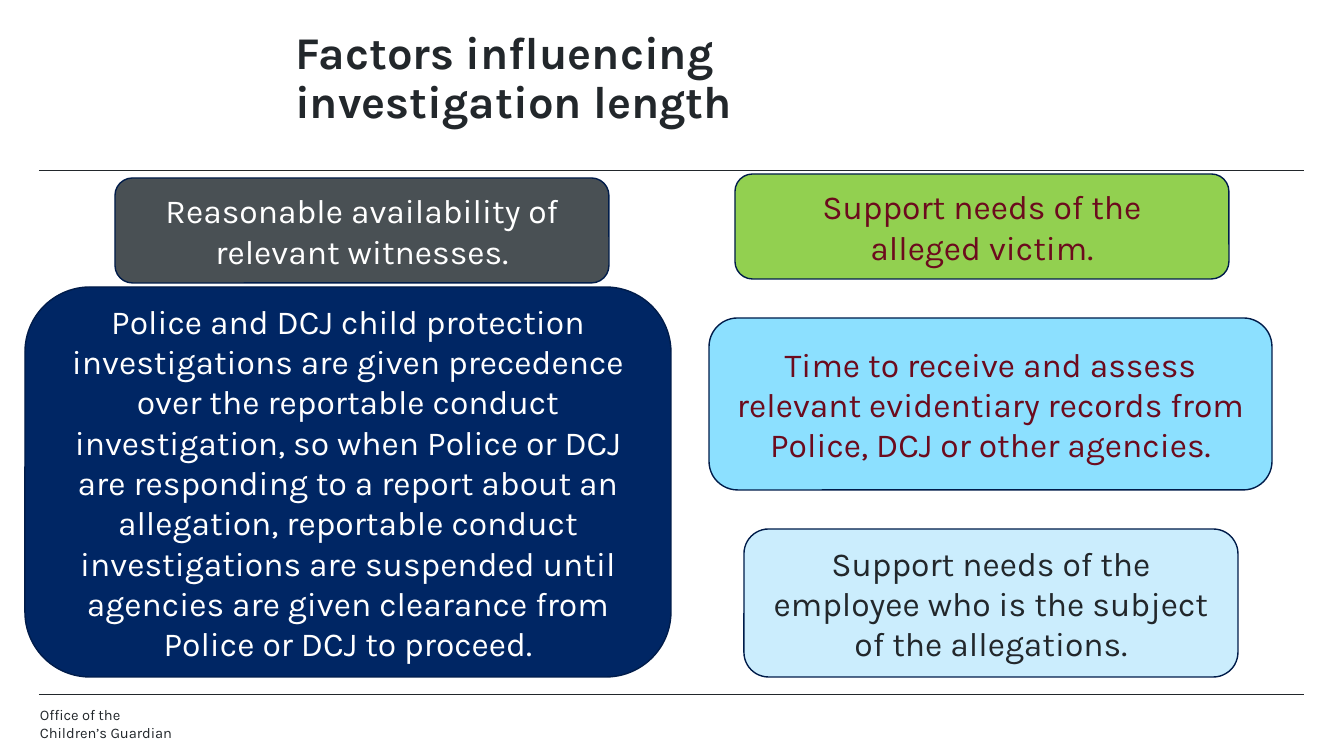
from pptx import Presentation
from pptx.dml.color import RGBColor
from pptx.enum.shapes import MSO_CONNECTOR, MSO_SHAPE
from pptx.enum.text import MSO_ANCHOR, PP_ALIGN
from pptx.oxml.ns import qn
from pptx.util import Pt
from lxml import etree

STRAIGHT = MSO_CONNECTOR.STRAIGHT
ROUNDED = MSO_SHAPE.ROUNDED_RECTANGLE
MIDDLE = MSO_ANCHOR.MIDDLE
CENTER = PP_ALIGN.CENTER

EMU_PER_PX = 914400 / 100.8
FONT = "Karla"
INK, WHITE, MAROON, NAVY_LINE = "22272B", "FFFFFF", "6C0B1D", "001C4A"
RULE_TOPS = (170, 694)

FACTORS = [
    ((25, 287, 646, 390), "002664", WHITE,
     "Police and DCJ child protection investigations are given precedence over "
     "the reportable conduct investigation, so when Police or DCJ are responding "
     "to a report about an allegation, reportable conduct investigations are "
     "suspended until agencies are given clearance from Police or DCJ to proceed."),
    ((115, 178, 494, 105), "495054", WHITE,
     "Reasonable availability of relevant witnesses."),
    ((709, 318, 563, 172), "8CE0FF", MAROON,
     "Time to receive and assess relevant evidentiary records from Police, "
     "DCJ or other agencies."),
    ((735, 174, 494, 105), "92D050", MAROON,
     "Support needs of the\nalleged victim."),
    ((744, 529, 494, 148), "CBEDFD", INK,
     "Support needs of the employee who is the subject of the allegations."),
]


def px(*lengths):
    """Turn pixel lengths into EMU."""
    return [round(length * EMU_PER_PX) for length in lengths]


def color(value):
    """Turn a hex string into a colour."""
    return RGBColor.from_string(value)


def write(frame, text, size, ink, bold=False):
    """Fill a text frame and style its paragraphs."""
    frame.word_wrap = True
    frame.text = text
    for para in frame.paragraphs:
        para.font.name = FONT
        para.font.size = Pt(size)
        para.font.bold = bold
        para.font.color.rgb = color(ink)


def add_rule(page, top):
    """Draw a thin line across the page."""
    rule = page.shapes.add_connector(STRAIGHT, *px(39, top, 1304, top))
    rule.line.color.rgb = color(INK)
    rule.line.width = Pt(0.5)
    etree.SubElement(rule.element.spPr, qn("a:effectLst"))


def add_label(page, place, text, size, bold=False):
    """Add a plain text box and return its frame."""
    frame = page.shapes.add_textbox(*px(*place)).text_frame
    write(frame, text, size, INK, bold)
    return frame


def add_factor(page, place, fill, ink, text):
    """Add a rounded card holding one factor."""
    card = page.shapes.add_shape(ROUNDED, *px(*place))
    card.shadow.inherit = False
    card.fill.solid()
    card.fill.fore_color.rgb = color(fill)
    card.line.color.rgb = color(NAVY_LINE)
    card.line.width = Pt(1)
    frame = card.text_frame
    frame.vertical_anchor = MIDDLE
    write(frame, text, 24, ink)
    for para in frame.paragraphs:
        para.alignment = CENTER


def main():
    """Build the slide and save the deck."""
    deck = Presentation()
    deck.slide_width, deck.slide_height = px(1344, 756)
    page = deck.slides.add_slide(deck.slide_layouts[6])
    for top in RULE_TOPS:
        add_rule(page, top)
    title = add_label(page, (295, 30, 879, 105),
                      "Factors influencing\vinvestigation length", 32.4, True)
    title.margin_left = title.margin_top = title.margin_right = title.margin_bottom = 0
    title.paragraphs[0].line_spacing = 0.9
    for factor in FACTORS:
        add_factor(page, *factor)
    add_label(page, (30, 701, 652, 45), "Office of the\vChildren’s Guardian", 10.5)
    deck.save("out.pptx")


if __name__ == "__main__":
    main()
